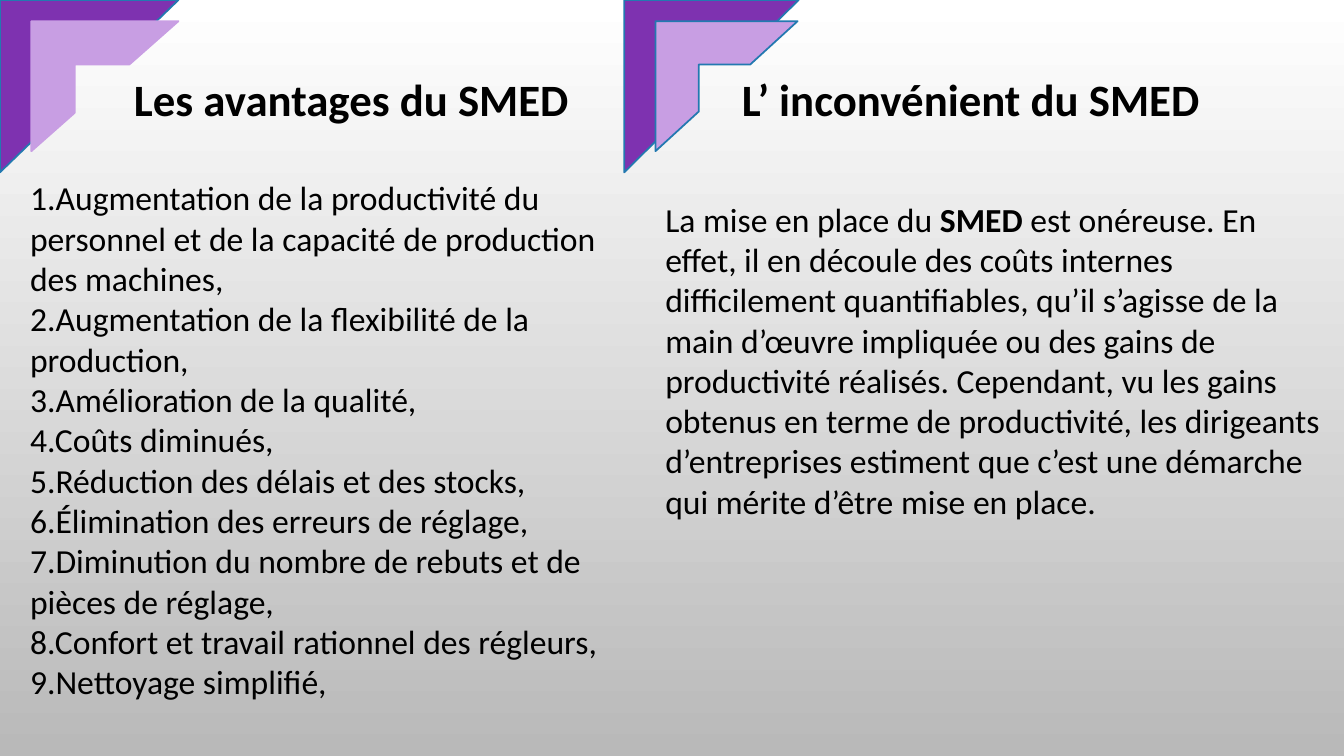
from pptx import Presentation
from pptx.dml.color import RGBColor
from pptx.enum.shapes import MSO_SHAPE
from pptx.enum.text import MSO_AUTO_SIZE, PP_ALIGN
from pptx.util import Inches, Pt

HALF_FRAME = MSO_SHAPE.HALF_FRAME
GROW = MSO_AUTO_SIZE.SHAPE_TO_FIT_TEXT
LEFT = PP_ALIGN.LEFT

BLACK = RGBColor(0x00, 0x00, 0x00)
WHITE = RGBColor(0xFF, 0xFF, 0xFF)
GREY = RGBColor(0xB9, 0xB9, 0xB9)
PURPLE = RGBColor(0x7E, 0x32, 0xB0)
LILAC = RGBColor(0xC8, 0x9E, 0xE3)
BLUE = RGBColor(0x23, 0x79, 0xB0)

ADVANTAGES = [
    "1.Augmentation de la productivité du personnel et de la capacité de production des machines,",
    "2.Augmentation de la flexibilité de la production,",
    "3.Amélioration de la qualité,",
    "4.Coûts diminués,",
    "5.Réduction des délais et des stocks,",
    "6.Élimination des erreurs de réglage,",
    "7.Diminution du nombre de rebuts et de pièces de réglage,",
    "8.Confort et travail rationnel des régleurs,",
    "9.Nettoyage simplifié,",
]
# Odd-numbered pieces between the marks are bold
DRAWBACK = [
    "La mise en place du **SMED **est onéreuse. En effet, il en découle des coûts internes "
    "difficilement quantifiables, qu’il s’agisse de la main d’œuvre impliquée ou des gains de "
    "productivité réalisés. Cependant, vu les gains obtenus en terme de productivité, les "
    "dirigeants d’entreprises estiment que c’est une démarche qui mérite d’être mise en place."
]


class SlideBuilder:
    """Places elements by percentages of the slide's width and height."""

    font_name = "Calibri"
    title_size = Pt(32)
    body_size = Pt(24)
    outline = Pt(1.25)

    def __init__(self, deck):
        self.deck = deck
        self.page = deck.slides.add_slide(deck.slide_layouts[6])

    def place(self, left, top, width, height):
        across, down = self.deck.slide_width / 100, self.deck.slide_height / 100
        return [round(v) for v in (left * across, top * down, width * across, height * down)]

    def background(self, start, end):
        fill = self.page.background.fill
        fill.gradient()
        fill.gradient_angle = 270
        for stop, color in zip(fill.gradient_stops, (start, end)):
            stop.color.rgb = color

    def frame(self, area, color, line_color):
        corner = self.page.shapes.add_shape(HALF_FRAME, *self.place(*area))
        corner.shadow.inherit = False
        corner.fill.solid()
        corner.fill.fore_color.rgb = color
        corner.line.color.rgb = line_color
        corner.line.width = self.outline

    def text(self, area, lines, size, bold=False):
        box = self.page.shapes.add_textbox(*self.place(*area))
        frame = box.text_frame
        frame.word_wrap = True
        frame.auto_size = GROW
        for index, line in enumerate(lines):
            para = frame.paragraphs[0] if index == 0 else frame.add_paragraph()
            para.alignment = LEFT
            para.font.name = self.font_name
            para.font.size = size
            para.font.bold = bold
            para.font.color.rgb = BLACK
            for number, piece in enumerate(line.split("**")):
                span = para.add_run()
                span.text = piece
                if number % 2:
                    span.font.bold = True

    def title(self, area, wording):
        self.text(area, [wording], self.title_size, bold=True)

    def body(self, area, lines):
        self.text(area, lines, self.body_size)


def main():
    deck = Presentation()
    deck.slide_width, deck.slide_height = Inches(13.33), Inches(7.5)
    slide = SlideBuilder(deck)
    slide.background(WHITE, GREY)

    # Corner ornaments: left, outer width, inner width, inner outline
    for left, outer, inner, inner_line in ((0, 13.28, 10.95, LILAC),
                                           (46.44, 12.98, 10.58, BLUE)):
        slide.frame((left, 0, outer, 22.8), PURPLE, BLUE)
        slide.frame((left + 2.33, 2.8, inner, 17.2), LILAC, inner_line)

    # Advantages
    slide.title((9.23, 8.8, 37.21, 8.53), "Les avantages du SMED")
    slide.body((1.5, 22.8, 44.26, 71.33), ADVANTAGES)

    # Drawback
    slide.title((54.46, 8.8, 45.54, 8.53), "L’ inconvénient du SMED")
    slide.body((48.76, 25.6, 51.24, 44.4), DRAWBACK)

    deck.save("out.pptx")


if __name__ == "__main__":
    main()
